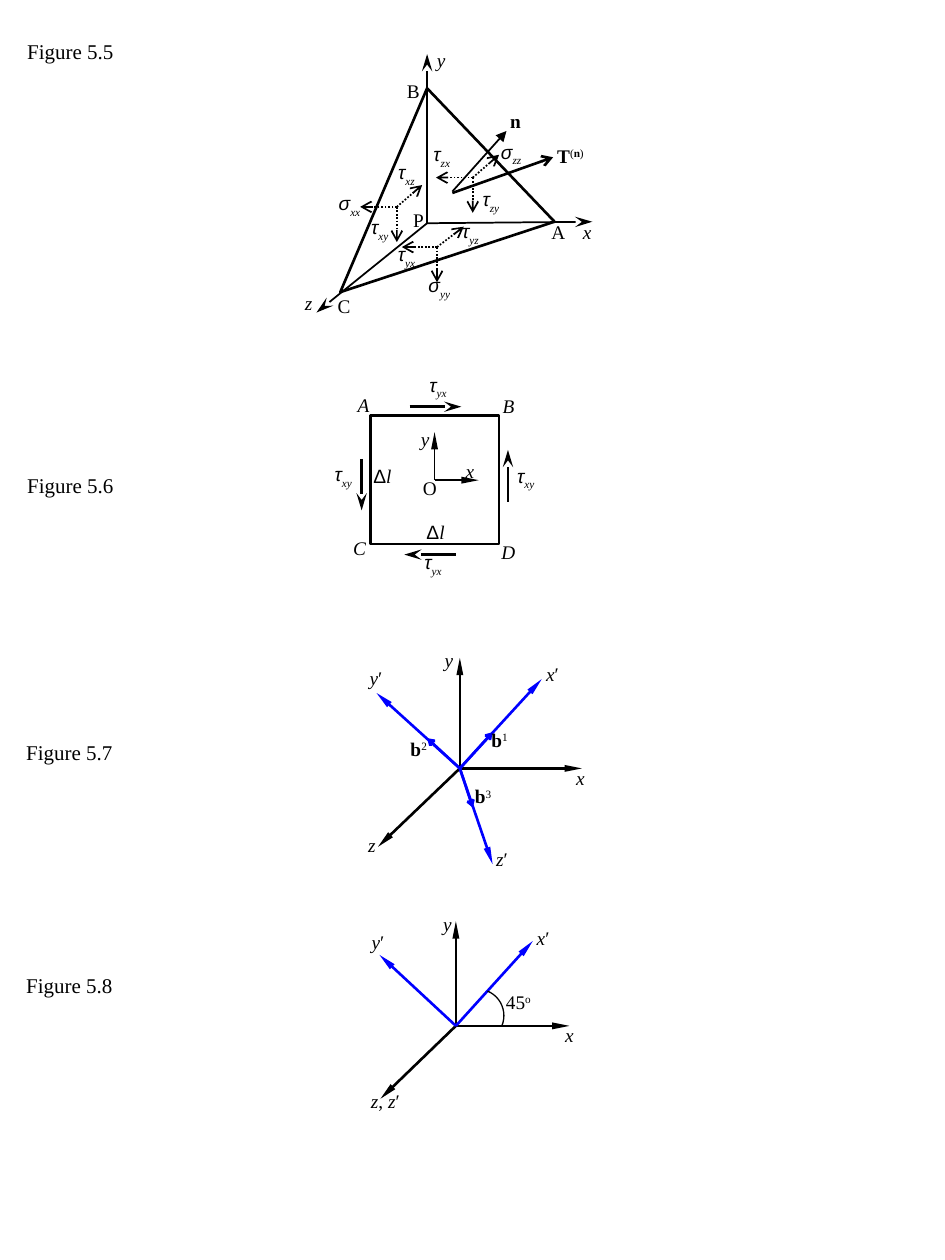
from pptx import Presentation
from pptx.util import Cm, Pt
from pptx.dml.color import RGBColor
from pptx.enum.dml import MSO_LINE as Dash
from pptx.enum.shapes import MSO_CONNECTOR as Link, MSO_SHAPE as Form
from pptx.enum.text import MSO_AUTO_SIZE as Fit, PP_ALIGN as Align
from pptx.oxml.ns import qn
from lxml.etree import SubElement as Sub

BLACK = RGBColor(0, 0, 0)
BLUE = RGBColor(0, 0, 255)
SERIF, SANS = "Times New Roman", "Arial"


def tau(sub):
    return [("τ", "si"), (sub, "i_")]


def sigma(sub):
    return [("σ", "si"), (sub, "i_")]


def ital(text):
    return [(text, "i")]


def plain(text):
    return [(text, "")]


def prime(text):
    return [(text, "i"), ("′", "")]


def base(num):
    return [("b", "b"), (num, "^")]


DELTA = [("Δ", "s"), ("l", "i")]
FORCE = [("T", "b"), ("(", "^"), ("n", "b^"), (")", "^")]

# style: color, width, head, head width, head length, dotted
STYLES = {
    "thin": (BLACK, 1, "stealth", "med", "lg", False),
    "dots": (BLACK, 1, "arrow", "med", "med", True),
    "force": (BLACK, 1.5, "arrow", "med", "med", False),
    "norm": (BLACK, 1, "triangle", "med", "med", False),
    "small": (BLACK, 1, "triangle", "sm", "lg", False),
    "shear": (BLACK, 1.5, "stealth", "med", "lg", False),
    "axis": (BLACK, 1.5, "triangle", "sm", "lg", False),
    "turned": (BLUE, 1.5, "triangle", "sm", "lg", False),
    "unit": (BLUE, 1.5, "arrow", "sm", "sm", False),
}

TITLES = [("Figure 5.5", 0.12, 0.26), ("Figure 5.6", 0.12, 3.7),
          ("Figure 5.7", 0.11, 5.82), ("Figure 5.8", 0.11, 7.67)]

FIGURES = [
    {"lines": [
        ("thin", (3.39, 1.77), [(3.39, 0.43), (4.7, 1.76), (2.51, 2.48)]),
        ("dots", (3.47, 1.96), [(3.47, 2.24), (3.19, 1.96), (3.68, 1.8)]),
        ("dots", (3.75, 1.41), [(3.96, 1.23), (3.75, 1.69), (3.46, 1.41)]),
        ("dots", (3.15, 1.64), [(3.35, 1.47), (3.15, 1.92), (2.86, 1.64)]),
        ("force", (3.59, 1.53), [(4.39, 1.25)]),
        ("norm", (3.59, 1.52), [(4.02, 1.04)])],
     "shapes": [("path", [(3.39, 0.7), (2.7, 2.32), (4.4, 1.76)])],
     "labels": [
        ((0.2, 0.2), [
            (ital("x"), 4.56, 1.75), (ital("y"), 3.4, 0.38),
            (ital("z"), 2.35, 2.31), (plain("B"), 3.18, 0.63),
            (plain("A"), 4.33, 1.75), (plain("C"), 2.63, 2.34),
            (plain("P"), 3.22, 1.65)]),
        ((0.31, 0.26), [
            (sigma("zz"), 3.9, 1.11), (tau("zx"), 3.35, 1.13),
            (tau("zy"), 3.74, 1.49), (sigma("yy"), 3.33, 2.17),
            (tau("yz"), 3.58, 1.74), (tau("yx"), 3.07, 1.92),
            (sigma("xx"), 2.62, 1.52), (tau("xz"), 3.07, 1.27),
            (tau("xy"), 2.86, 1.71)]),
        ((0.34, 0.2), [(FORCE, 4.36, 1.14)]),
        ((0.18, 0.2), [([("n", "b")], 4, 0.87)])]},
    {"lines": [
        ("small", (3.45, 3.81), [(3.8, 3.81), (3.45, 3.43)]),
        ("shear", (4.03, 3.98), [(4.03, 3.57)]),
        ("shear", (3.25, 3.23), [(3.66, 3.23)]),
        ("shear", (2.87, 3.64), [(2.87, 4.05)]),
        ("shear", (3.62, 4.4), [(3.21, 4.4)])],
     "shapes": [("box", (2.94, 3.3, 1.02, 1.02))],
     "labels": [
        ((0.37, 0.29), [
            (tau("xy"), 3.99, 3.68), (tau("yx"), 3.29, 2.96),
            (tau("xy"), 2.54, 3.67), (tau("yx"), 3.25, 4.37)]),
        ((0.23, 0.22), [
            (ital("y"), 3.26, 3.39), (ital("A"), 2.77, 3.12),
            (ital("B"), 3.92, 3.13), (ital("C"), 2.74, 4.26),
            (ital("D"), 3.92, 4.29)]),
        ((0.2, 0.2), [(ital("x"), 3.63, 3.64), (plain("O"), 3.31, 3.78)]),
        ((0.29, 0.21), [(DELTA, 3.31, 4.13), (DELTA, 2.89, 3.68)])]},
    {"lines": [
        ("axis", (3.65, 6.1), [(4.62, 6.1), (3.65, 5.22), (3, 6.72)]),
        ("turned", (3.65, 6.1), [(4.3, 5.39), (2.99, 5.5), (3.91, 6.86)]),
        ("unit", (3.65, 6.1), [(3.75, 6.41), (3.91, 5.81), (3.39, 5.86)])],
     "shapes": [],
     "labels": [
        ((0.19, 0.24), [
            (ital("x"), 4.51, 6.08), (ital("y"), 3.47, 5.14),
            (ital("z"), 2.86, 6.61), (prime("x"), 4.29, 5.26),
            (prime("y"), 2.89, 5.29), (prime("z"), 3.89, 6.73),
            (base("1"), 3.87, 5.78), (base("2"), 3.23, 5.85),
            (base("3"), 3.74, 6.23)])]},
    {"lines": [
        ("axis", (3.62, 8.14), [(4.52, 8.14), (3.62, 7.31), (3.02, 8.72)]),
        ("turned", (3.62, 8.14), [(4.23, 7.47), (3.01, 7.58)])],
     "shapes": [("arc", (3.58, 7.85, 0.42, 0.42))],
     "labels": [
        ((0.18, 0.22), [
            (ital("x"), 4.43, 8.12), (ital("y"), 3.46, 7.24),
            (prime("x"), 4.22, 7.35), (prime("y"), 2.91, 7.38)]),
        ((0.34, 0.22), [
            ([("z", "i"), (",", ""), (" z", "i"), ("′", "")], 2.89, 8.64)]),
        ((0.25, 0.2), [([("45", ""), ("o", "^")], 3.99, 7.86)])]},
]


def size(*vals):
    return [Cm(round(val * 2.54, 2)) for val in vals]


def add_text(shapes, runs, spot, points=11):
    box = shapes.add_textbox(*size(*spot))
    para = box.text_frame.paragraphs[0]
    for text, marks in runs:
        run = para.add_run()
        run.text = text
        font = run.font
        font.name = SANS if "s" in marks else SERIF
        font.size = Pt(points)
        font.color.rgb = BLACK
        font.italic = "i" in marks
        font.bold = "b" in marks
        if "_" in marks or "^" in marks:
            shift = "30000" if "^" in marks else "-30000"
            font._element.set("baseline", shift)
    return box.text_frame


def add_label(shapes, runs, spot):
    frame = add_text(shapes, runs, spot)
    frame.word_wrap = True
    frame.margin_left = frame.margin_right = 0
    frame.margin_top = frame.margin_bottom = 0
    frame.paragraphs[0].alignment = Align.CENTER


def add_arrow(shapes, style, start, end):
    color, width, head, wide, long, dotted = STYLES[style]
    link = shapes.add_connector(Link.STRAIGHT, *size(*start, *end))
    link.line.color.rgb = color
    link.line.width = Pt(width)
    if dotted:
        link.line.dash_style = Dash.ROUND_DOT
    props = link._element.spPr
    Sub(props.find(qn("a:ln")), qn("a:tailEnd"), type=head, w=wide, len=long)
    Sub(props, qn("a:effectLst"))


def add_form(shapes, kind, data):
    if kind == "path":
        first, *rest = [size(*point) for point in data]
        path = shapes.build_freeform(*first)
        path.add_line_segments(rest, close=True)
        form = path.convert_to_shape()
    else:
        shape = Form.ARC if kind == "arc" else Form.RECTANGLE
        form = shapes.add_shape(shape, *size(*data))
    if kind == "arc":
        form.rotation = 22.4
    form.shadow.inherit = False
    form.fill.background()
    form.line.color.rgb = BLACK
    form.line.width = Pt(0.75 if kind == "arc" else 1.5)


def main():
    deck = Presentation()
    deck.slide_width, deck.slide_height = size(7.5, 10)
    slide = deck.slides.add_slide(deck.slide_layouts[6])
    for text, left, top in TITLES:
        frame = add_text(slide.shapes, plain(text), (left, top, 0.89, 0.3), 12)
        frame.word_wrap = False
        frame.auto_size = Fit.SHAPE_TO_FIT_TEXT
    for figure in FIGURES:
        shapes = slide.shapes.add_group_shape().shapes
        for style, start, ends in figure["lines"]:
            for end in ends:
                add_arrow(shapes, style, start, end)
        for kind, data in figure["shapes"]:
            add_form(shapes, kind, data)
        for dims, labels in figure["labels"]:
            for runs, left, top in labels:
                add_label(shapes, runs, (left, top, *dims))
    deck.save("out.pptx")


if __name__ == "__main__":
    main()
